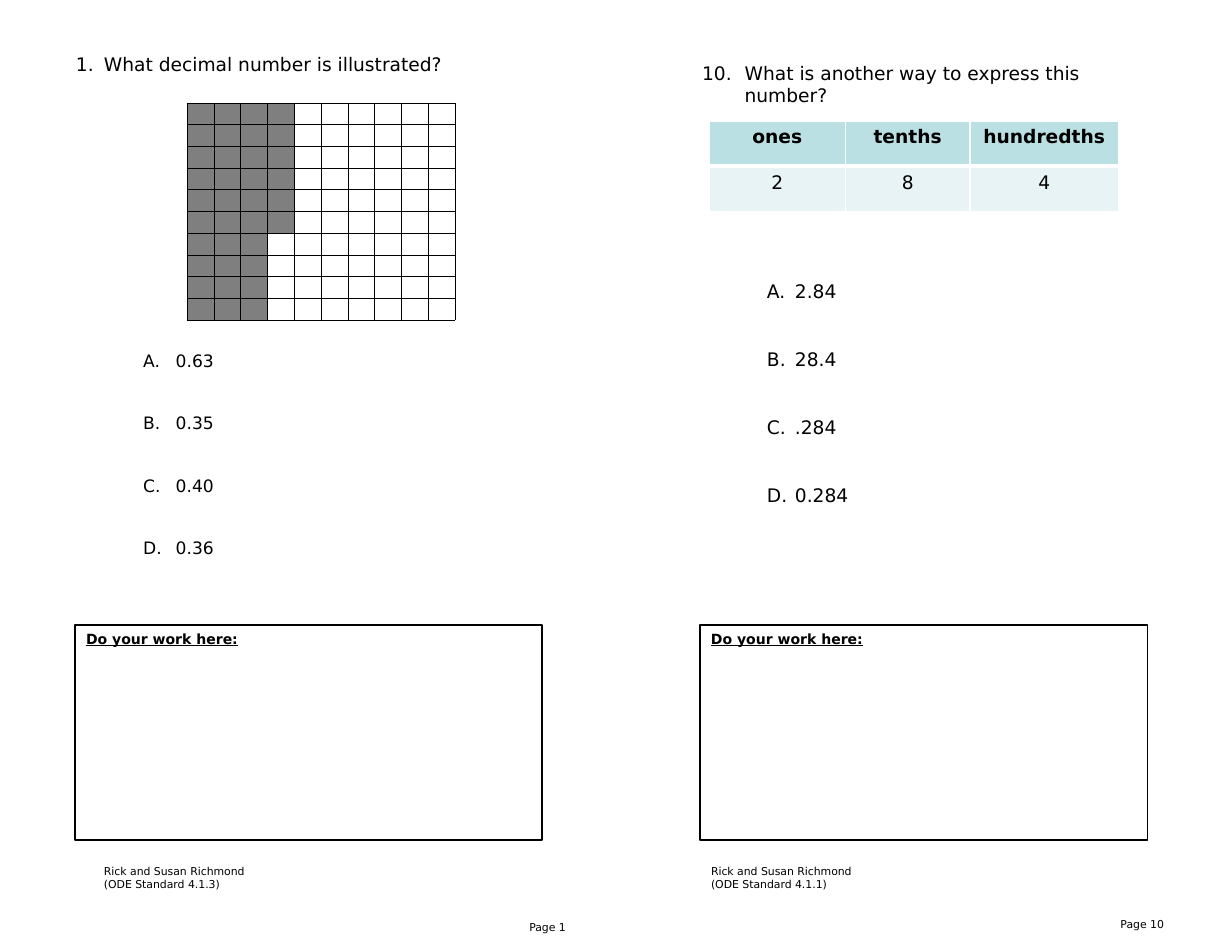
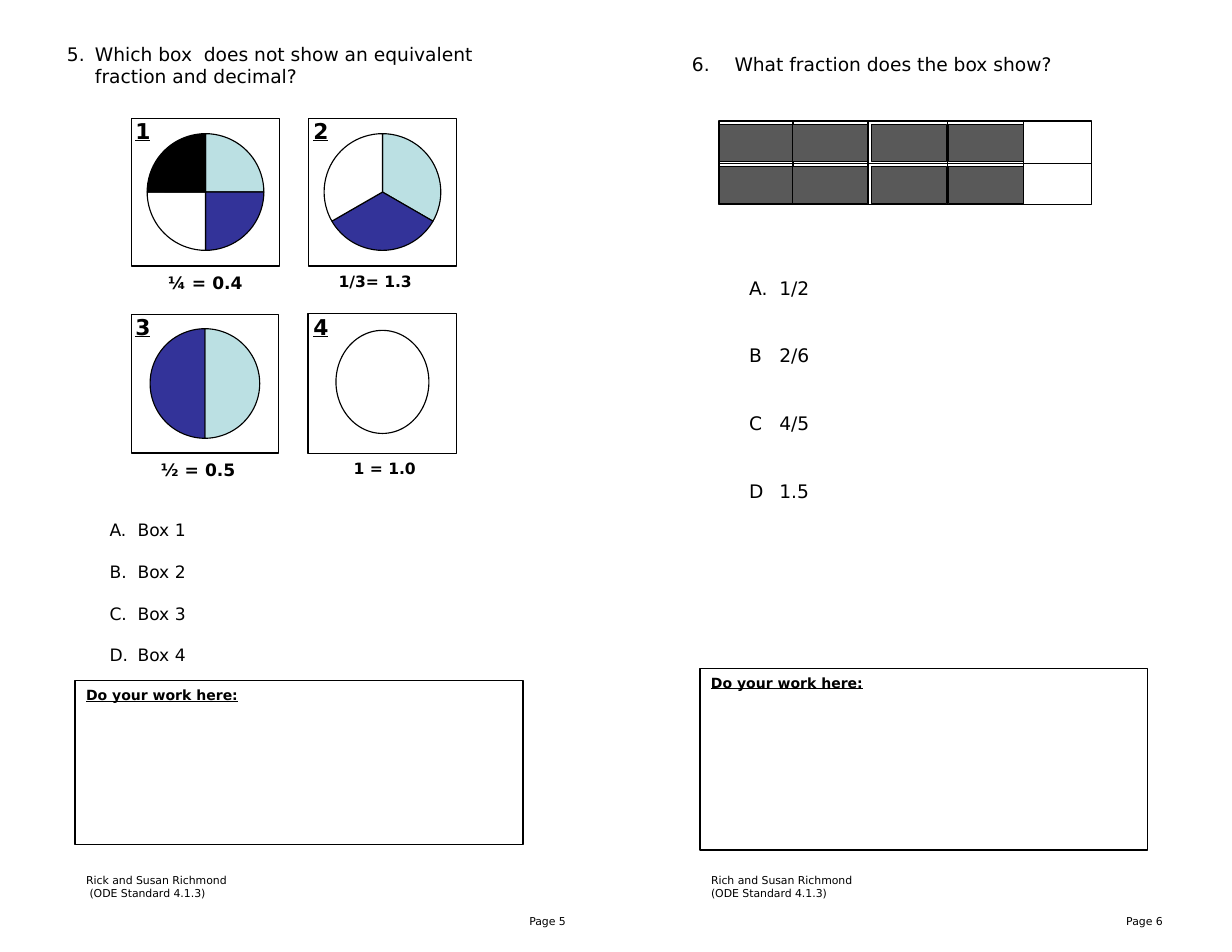
from lxml import etree
from pptx import Presentation
from pptx.chart.data import CategoryChartData
from pptx.dml.color import RGBColor
from pptx.enum.chart import XL_CHART_TYPE
from pptx.enum.shapes import MSO_CONNECTOR, MSO_SHAPE
from pptx.enum.text import MSO_ANCHOR, PP_ALIGN
from pptx.oxml import parse_xml
from pptx.oxml.ns import nsdecls, qn
from pptx.util import Inches, Pt

PIE = XL_CHART_TYPE.PIE
RECT, OVAL = MSO_SHAPE.RECTANGLE, MSO_SHAPE.OVAL
STRAIGHT = MSO_CONNECTOR.STRAIGHT
TOP = MSO_ANCHOR.TOP
LEFT, CENTER, RIGHT = PP_ALIGN.LEFT, PP_ALIGN.CENTER, PP_ALIGN.RIGHT

FONT = "DejaVu Sans"
BLACK, WHITE, GRAY, DARK = "000000", "FFFFFF", "7F7F7F", "595959"
AQUA, PALE, NAVY = "BBE0E3", "E7F3F4", "333399"
NUMBERS, LETTERS = "arabicPeriod", "alphaUcPeriod"

# Content: each half page has a question, answers, work box and footer
PAGES = [
    [
        dict(
            question="What decimal number is illustrated?", number=1,
            question_at=(0.58, 0.42, 3.9, 0.3), hang=0.25,
            answers=["0.63", "0.35", "0.40", "0.36"], auto=True,
            answers_at=(0.92, 3.08, 3.75, 1.95),
            answer_style=dict(size=11, indent=(0.55, -0.29), gap=26.8),
            work_at=(0.67, 5.58, 4.17, 1.92), credit_at=(0.83, 7.67, 1.92, 0.34),
            credit=["Rick and Susan Richmond", "(ODE Standard 4.1.3)"],
            page="Page 1", page_at=(4.33, 8.17, 0.82, 0.3),
        ),
        dict(
            question="What is another way to express this number?", number=10,
            question_at=(6.17, 0.5, 4.08, 0.5), hang=0.38,
            answers=["2.84", "28.4", ".284", "0.284"], auto=True,
            answers_at=(6.75, 2.45, 2.83, 2.12),
            answer_style=dict(size=12, indent=(0.25, -0.25), gap=29.2),
            work_at=(6.25, 5.58, 4, 1.92), credit_at=(6.25, 7.67, 1.92, 0.34),
            credit=["Rick and Susan Richmond", "(ODE Standard 4.1.1)"],
            page="Page 10", page_at=(9.67, 8.14, 0.82, 0.3),
        ),
    ],
    [
        dict(
            question="Which box  does not show an equivalent fraction and decimal?",
            number=5, question_at=(0.5, 0.33, 4.3, 0.5), hang=0.25,
            answers=["Box 1", "Box 2", "Box 3", "Box 4"], auto=True,
            answers_at=(0.5, 4.59, 4.5, 1.43),
            answer_style=dict(size=11, indent=(0.63, -0.25), gap=13.6),
            work_at=(0.67, 6.08, 4, 1.46), credit_at=(0.67, 7.75, 1.92, 0.34),
            credit=["Rick and Susan Richmond", " (ODE Standard 4.1.3)"],
            page="Page 5", page_at=(4.47, 8.12, 0.68, 0.25),
        ),
        dict(
            question="What fraction does the box show?", number=6,
            question_at=(6.08, 0.42, 4.25, 0.3), hang=0.38,
            answers=["A.\t1/2", "B\t2/6", "C\t4/5", "D\t1.5"], auto=False,
            answers_at=(6.08, 2.42, 4.25, 2.14),
            answer_style=dict(size=12, indent=(0.78, -0.27), gap=29.2),
            work_at=(6.25, 5.97, 4, 1.62), credit_at=(6.25, 7.75, 1.92, 0.34),
            credit=["Rich and Susan Richmond", "(ODE Standard 4.1.3)"],
            page="Page 6", page_at=(9.83, 8.12, 0.65, 0.25),
        ),
    ],
]

SHADED = 36
PLACE_VALUES = [["ones", "tenths", "hundredths"], ["2", "8", "4"]]

PIES = [
    ((1.17, 1.05, 1.33, 1.33), [25, 25, 25, 25]),
    ((2.75, 1.05, 1.33, 1.33), [33, 33, 33]),
    ((1.17, 2.8, 1.32, 1.25), [50, 50]),
]
SLICES = [AQUA, NAVY, WHITE, BLACK]
CAPTIONS = [
    ("¼ = 0.4", (1.25, 2.38, 1.17, 0.29), 11),
    ("1/3= 1.3", (2.81, 2.38, 1.08, 0.27), 10),
    ("½ = 0.5", (1.27, 4.05, 1, 0.29), 11),
    ("1 = 1.0", (2.81, 4.05, 1.25, 0.27), 10),
]


def rgb(color):
    return RGBColor.from_string(color)


def box(at):
    return [Inches(v) for v in at]


def write(tf, lines, size=12, align=LEFT, bullet=None, start=1,
          indent=None, gap=0, **style):
    tf.word_wrap = True
    tf.vertical_anchor = TOP
    for i, line in enumerate(lines):
        p = tf.paragraphs[0] if i == 0 else tf.add_paragraph()
        p.alignment = align
        p.space_after = Pt(gap)
        r = p.add_run()
        r.text = line
        for key, value in dict(name=FONT, size=Pt(size), **style).items():
            setattr(r.font, key, value)
        r.font.color.rgb = rgb(BLACK)
        ppr = p._p.get_or_add_pPr()
        if indent:
            for key, value in zip(("marL", "indent"), indent):
                ppr.set(key, str(Inches(value)))
        if bullet:
            font = etree.SubElement(ppr, qn("a:buFont"))
            font.set("typeface", FONT)
            num = etree.SubElement(ppr, qn("a:buAutoNum"))
            num.set("type", bullet)
            num.set("startAt", str(start))


def text(s, at, lines, **style):
    write(s.shapes.add_textbox(*box(at)).text_frame, lines, **style)


def shape(s, kind, at, fill=None):
    sp = s.shapes.add_shape(kind, *box(at))
    sp.shadow.inherit = False
    if fill:
        sp.fill.solid()
        sp.fill.fore_color.rgb = rgb(fill)
    else:
        sp.fill.background()
    sp.line.color.rgb = rgb(BLACK)
    sp.line.width = Pt(0.75)
    return sp


def line(s, x1, y1, x2, y2):
    c = s.shapes.add_connector(STRAIGHT, *box((x1, y1, x2, y2)))
    c.line.color.rgb = rgb(BLACK)
    c.line.width = Pt(0.75)
    etree.SubElement(c._element.spPr, qn("a:effectLst"))


def table(s, at, widths, rows):
    t = s.shapes.add_table(rows, len(widths), *box(at)).table
    t.first_row = t.horz_banding = False
    for col, width in zip(t.columns, widths):
        col.width = Inches(width)
    for row in t.rows:
        row.height = Inches(at[3] / rows)
    return t


def paint(cell, fill, color, widths):
    """Set the borders (left, right, top, bottom) and the fill of a cell."""
    tcpr = cell._tc.get_or_add_tcPr()
    for side, width in zip("LRTB", widths):
        tcpr.append(parse_xml(
            f'<a:ln{side} {nsdecls("a")} w="{Pt(width)}"><a:solidFill>'
            f'<a:srgbClr val="{color}"/></a:solidFill></a:ln{side}>'))
    if fill:
        cell.fill.solid()
        cell.fill.fore_color.rgb = rgb(fill)
    else:
        cell.fill.background()


def hundred_grid(s):
    t = table(s, (1.67, 0.92, 2.17, 1.94), [0.217] * 10, 10)
    full, rest = divmod(SHADED, 10)
    for y in range(10):
        for x in range(10):
            cell = t.cell(y, x)
            cell.margin_top = cell.margin_bottom = 0
            end = etree.SubElement(cell.text_frame.paragraphs[0]._p,
                                   qn("a:endParaRPr"))
            end.set("sz", "600")
            shaded = x < full or (x == full and y < rest)
            paint(cell, GRAY if shaded else None, BLACK, [0.5] * 4)


def place_value_table(s):
    t = table(s, (6.33, 1.08, 3.67, 0.81), [1.22, 1.11, 1.33], 2)
    for y, values in enumerate(PLACE_VALUES):
        head = y == 0
        for x, value in enumerate(values):
            cell = t.cell(y, x)
            write(cell.text_frame, [value], align=CENTER, bold=head)
            paint(cell, AQUA if head else PALE, WHITE,
                  [1, 1, 1 if head else 3, 3 if head else 1])


def pie(s, at, values):
    data = CategoryChartData()
    data.categories = [str(i + 1) for i in range(len(values))]
    data.add_series("Series 1", values)
    chart = s.shapes.add_chart(PIE, *box(at), data).chart
    chart.has_title = chart.has_legend = False
    chart.font.name = "Arial"
    chart.font.size = Pt(10)
    chart.font.color.rgb = rgb(BLACK)
    for i, color in enumerate(SLICES[:len(values)]):
        fmt = chart.plots[0].series[0].points[i].format
        fmt.fill.solid()
        fmt.fill.fore_color.rgb = rgb(color)
        fmt.line.color.rgb = rgb(BLACK)
        fmt.line.width = Pt(0.75)
    # Frame and centred plot area
    root = chart._chartSpace.find(qn("c:chart"))
    root.addprevious(parse_xml(f'<c:roundedCorners {nsdecls("c")} val="0"/>'))
    root.addnext(parse_xml(
        f'<c:spPr {nsdecls("c", "a")}><a:noFill/><a:ln w="{Pt(0.75)}">'
        f'<a:solidFill><a:srgbClr val="{BLACK}"/></a:solidFill></a:ln></c:spPr>'))
    h = 0.79
    w = h * at[3] / at[2]
    places = dict(x=(1 - w) / 2, y=(1 - h) / 2, w=w, h=h)
    area = root.find(qn("c:plotArea"))
    for old in area.findall(qn("c:layout")):
        area.remove(old)
    area.insert(0, parse_xml(
        f'<c:layout {nsdecls("c")}><c:manualLayout><c:layoutTarget val="inner"/>'
        '<c:xMode val="edge"/><c:yMode val="edge"/>'
        + "".join(f'<c:{k} val="{v:.3f}"/>' for k, v in places.items())
        + "</c:manualLayout></c:layout>"))


def fraction_boxes(s):
    for at, values in PIES:
        pie(s, at, values)
    shape(s, OVAL, (3, 2.95, 0.83, 0.92), WHITE)
    shape(s, RECT, (2.75, 2.8, 1.33, 1.25))
    for i, (caption, at, size) in enumerate(CAPTIONS):
        text(s, at, [caption], size=size, align=CENTER, bold=True)
        number_at = (1.11 + 1.59 * (i % 2), 1 + 1.75 * (i // 2), 0.33, 0.34)
        text(s, number_at, [str(i + 1)], size=14, bold=True, underline=True)


def fraction_bar(s):
    left, top, right, bottom = 6.42, 1.08, 9.75, 1.83
    shape(s, RECT, (left, top, right - left, bottom - top), WHITE)
    line(s, left, 1.46, right, 1.46)
    for x in (7.08, 7.75, 8.46, 9.14):
        line(s, x, top, x, bottom)
    for y in (1.11, 1.49):
        for x in (6.42, 7.08, 7.78, 8.47):
            shape(s, RECT, (x, y, 0.67, 0.33), DARK)


def half_page(s, h):
    text(s, h["page_at"], [h["page"]], size=7, align=RIGHT)
    work = shape(s, RECT, h["work_at"])
    write(work.text_frame, ["Do your work here:"], size=9, bold=True, underline=True)
    text(s, h["credit_at"], h["credit"], size=7)
    text(s, h["question_at"], [h["question"]], bullet=NUMBERS,
         start=h["number"], indent=(h["hang"], -h["hang"]))
    text(s, h["answers_at"], h["answers"],
         bullet=LETTERS if h["auto"] else None, **h["answer_style"])


def main():
    prs = Presentation()
    prs.slide_width, prs.slide_height = Inches(11), Inches(8.5)
    figures = [(hundred_grid, place_value_table), (fraction_boxes, fraction_bar)]
    for halves, draws in zip(PAGES, figures):
        s = prs.slides.add_slide(prs.slide_layouts[6])
        for half, draw in zip(halves, draws):
            half_page(s, half)
            draw(s)
    prs.save("out.pptx")


if __name__ == "__main__":
    main()
